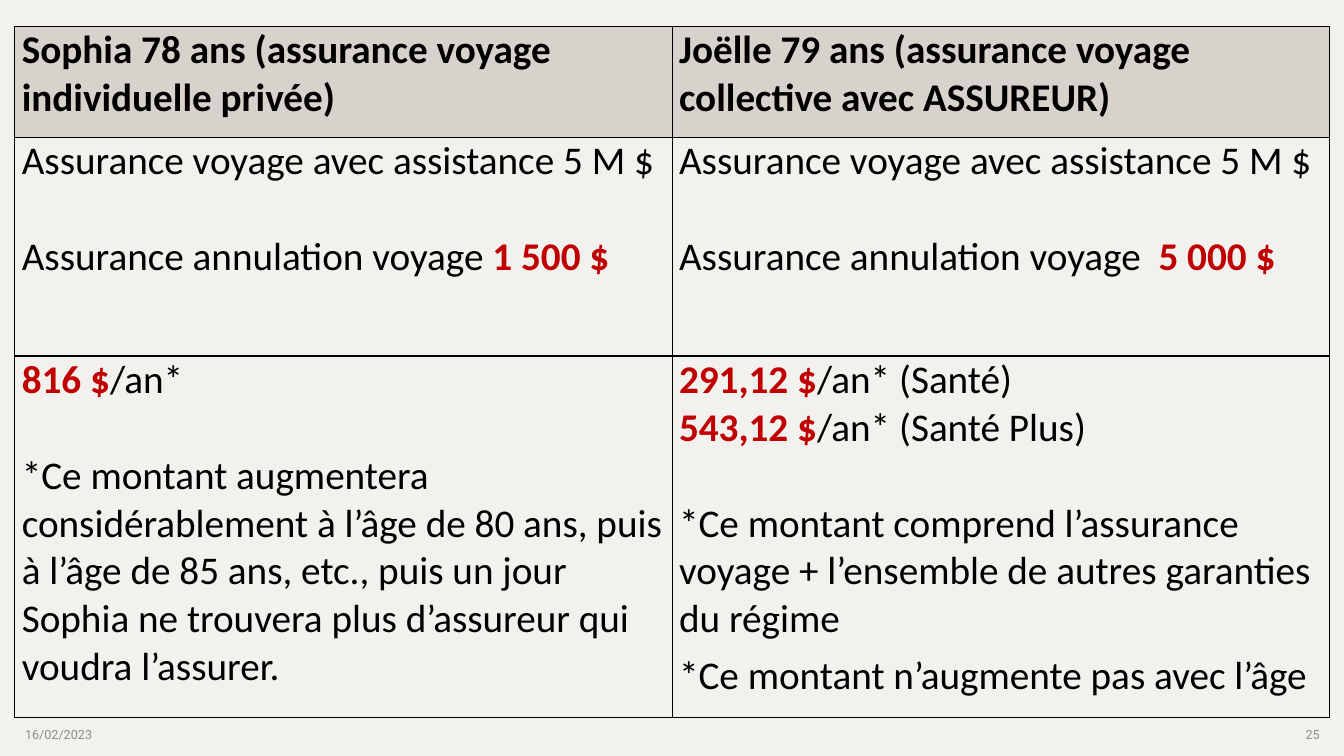
from lxml import etree
from pptx import Presentation
from pptx.dml.color import RGBColor
from pptx.enum.text import MSO_ANCHOR, PP_ALIGN
from pptx.oxml.ns import qn
from pptx.util import Pt

LEFT, RIGHT = PP_ALIGN.LEFT, PP_ALIGN.RIGHT
TOP, MIDDLE = MSO_ANCHOR.TOP, MSO_ANCHOR.MIDDLE

BACKGROUND = RGBColor(0xF2, 0xF1, 0xEE)
HEADER_FILL = RGBColor(0xD7, 0xD2, 0xCC)
BLACK = RGBColor(0, 0, 0)
RED = RGBColor(0xC0, 0, 0)
GREY = RGBColor(0x8C, 0x8C, 0x8C)

LINE_GAP = 34.2
ROW_HEIGHTS = (79.2, 156.2, 258.5)

# Each cell lists (text, space after); text between bars is a red amount.
COVERAGE = "Assurance voyage avec assistance 5 M $"
ROWS = (
    (
        [("Sophia 78 ans (assurance voyage individuelle privée)", 0)],
        [("Joëlle 79 ans (assurance voyage collective avec ASSUREUR)", 0)],
    ),
    (
        [(COVERAGE, LINE_GAP), ("Assurance annulation voyage |1 500 $|", 0)],
        [(COVERAGE, LINE_GAP), ("Assurance annulation voyage  |5 000 $|", 0)],
    ),
    (
        [
            ("|816 $|/an*", LINE_GAP),
            ("*Ce montant augmentera considérablement à l’âge de 80 ans, puis "
             "à l’âge de 85 ans, etc., puis un jour Sophia ne trouvera plus "
             "d’assureur qui voudra l’assurer.", 0),
        ],
        [
            ("|291,12 $|/an* (Santé)", 0),
            ("|543,12 $|/an* (Santé Plus)", LINE_GAP),
            ("*Ce montant comprend l’assurance voyage + l’ensemble de autres "
             "garanties du régime", 6),
            ("*Ce montant n’augmente pas avec l’âge", 0),
        ],
    ),
)


def set_borders(cell):
    properties = cell._tc.get_or_add_tcPr()
    for position, side in enumerate(("a:lnL", "a:lnR", "a:lnT", "a:lnB")):
        line = etree.Element(qn(side), w=str(Pt(1)))
        fill = etree.SubElement(line, qn("a:solidFill"))
        etree.SubElement(fill, qn("a:srgbClr"), val=str(BLACK))
        properties.insert(position, line)


def fill_cell(cell, lines, is_header):
    cell.fill.solid()
    cell.fill.fore_color.rgb = HEADER_FILL if is_header else BACKGROUND
    cell.margin_left = cell.margin_right = Pt(5)
    cell.margin_top = cell.margin_bottom = Pt(0)
    cell.vertical_anchor = TOP
    set_borders(cell)
    frame = cell.text_frame
    for number, (text, space_after) in enumerate(lines):
        paragraph = frame.add_paragraph() if number else frame.paragraphs[0]
        paragraph.space_after = Pt(space_after)
        paragraph.font.name = "Calibri"
        paragraph.font.size = Pt(28)
        for index, part in enumerate(text.split("|")):
            if part:
                is_amount = index % 2 == 1
                run = paragraph.add_run()
                run.text = part
                run.font.bold = is_header or is_amount
                run.font.color.rgb = RED if is_amount else BLACK


def add_comparison(slide, left, top, width):
    frame = slide.shapes.add_table(
        len(ROWS), 2, Pt(left), Pt(top), Pt(width), Pt(sum(ROW_HEIGHTS)))
    table = frame.table
    table.first_row = table.horz_banding = False
    for column in table.columns:
        column.width = Pt(width / 2)
    for row_number, (height, contents) in enumerate(zip(ROW_HEIGHTS, ROWS)):
        table.rows[row_number].height = Pt(height)
        for column_number, lines in enumerate(contents):
            fill_cell(table.cell(row_number, column_number), lines, row_number == 0)


def add_footer(slide, left, top, width, height):
    box_width = 216
    for text, offset, alignment in (
        ("16/02/2023", 0, LEFT),
        ("25", width - box_width, RIGHT),
    ):
        box = slide.shapes.add_textbox(
            Pt(left + offset), Pt(top), Pt(box_width), Pt(height))
        frame = box.text_frame
        frame.word_wrap = True
        frame.vertical_anchor = MIDDLE
        paragraph = frame.paragraphs[0]
        paragraph.text = text
        paragraph.alignment = alignment
        paragraph.font.name = "Roboto"
        paragraph.font.size = Pt(9)
        paragraph.font.color.rgb = GREY


def main():
    presentation = Presentation()
    presentation.slide_width = Pt(960)
    presentation.slide_height = Pt(540)
    slide = presentation.slides.add_slide(presentation.slide_layouts[6])
    slide.background.fill.solid()
    slide.background.fill.fore_color.rgb = BACKGROUND
    add_footer(slide, 10.8, 510.5, 939, 28.8)
    add_comparison(slide, 10.6, 18.9, 939)
    presentation.save("out.pptx")


if __name__ == "__main__":
    main()
